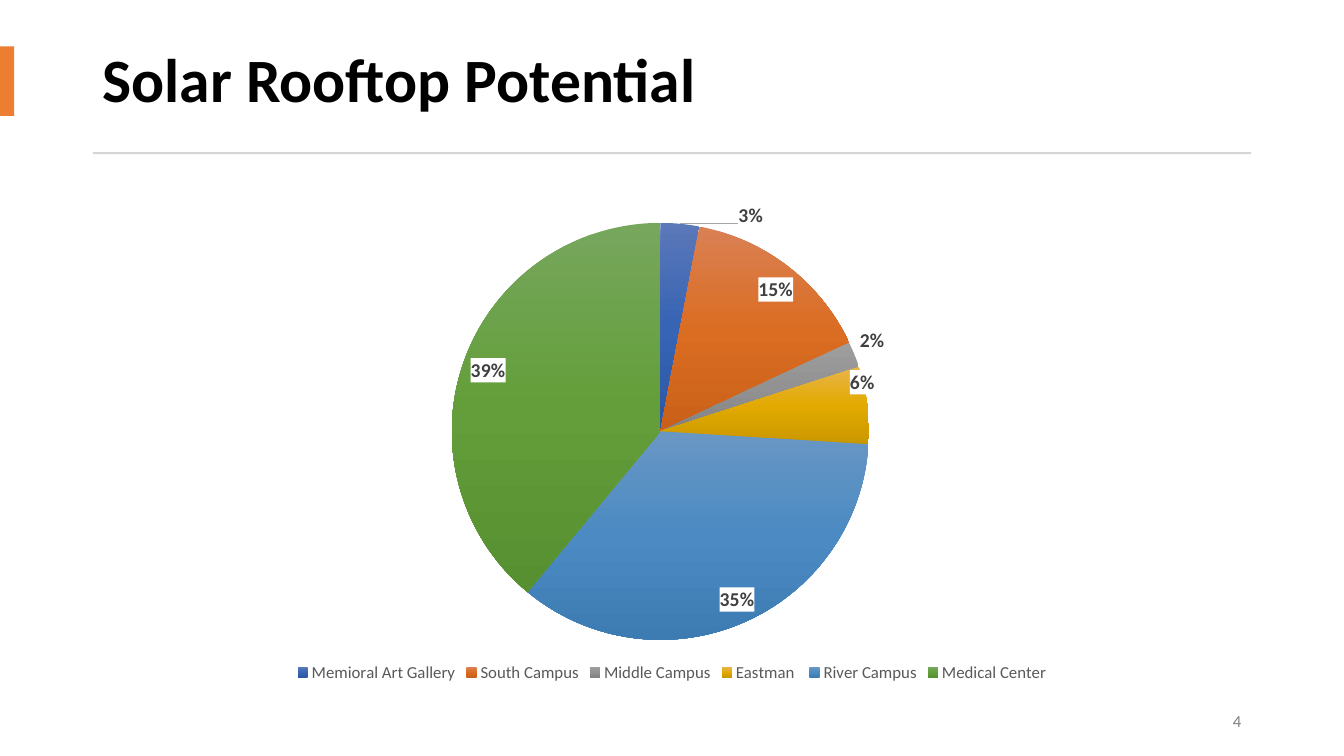
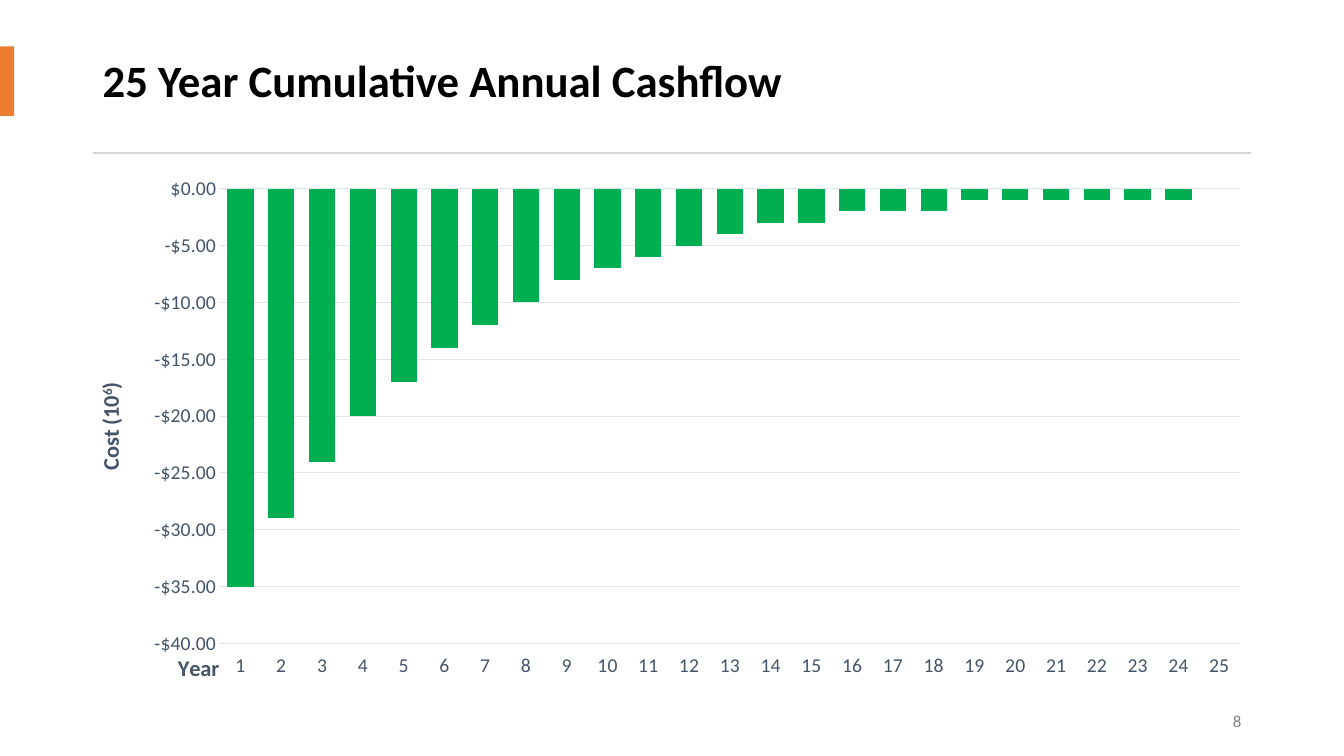
from copy import deepcopy

from pptx import Presentation, util as u
from pptx.chart.data import CategoryChartData
from pptx.dml.color import RGBColor
from pptx.enum import chart as ch, shapes, text
from pptx.oxml import parse_xml
from pptx.oxml.ns import nsdecls, qn

# Content
ROOFTOPS = [  # campus, share in percent, gradient from top to bottom
    ("Memioral Art Gallery", 3, ("5B78B9", "3764B4", "2C57A5")),
    ("South Campus", 15, ("D98054", "DB6D23", "CA6018")),
    ("Middle Campus", 2, ("9E9E9E", "929292", "828282")),
    ("Eastman ", 6, ("E8B44B", "E2AA00", "C99700")),
    ("River Campus", 35, ("6997C5", "4B8AC2", "3D7BB3")),
    ("Medical Center", 39, ("77A65D", "639E3A", "579030")),
]
LABEL_SHIFTS = {0: (0.05, 0.02), 3: (-0.02, -0.02)}  # slice: shares of the chart
CASHFLOW = [-35, -29, -24, -20, -17, -14, -12, -10, -8, -7, -6, -5, -4,
            -3, -3, -2, -2, -2, -1, -1, -1, -1, -1, -1, 0]

# Shared look
FONT = "Calibri"
ACCENT, RULE, PAGE_GREY = "ED7D31", "D5D5D5", "808080"
AXIS_TEXT, GRID, BARS, LEADER = "44546A", "E0E5EB", "00B050", "A6A6A6"
WIDTH, HEIGHT = 13.33, 7.5
MARGIN = 0.92
BODY = WIDTH - 2 * MARGIN


def rgb(value):
    return RGBColor.from_string(value)


def style(font, size, color, bold=False):
    font.name, font.size, font.bold = FONT, u.Pt(size), bold
    font.color.rgb = rgb(color)


def box(left, top, width, height):
    return [u.Inches(side) for side in (left, top, width, height)]


def add_band(slide, color, *place):
    band = slide.shapes.add_shape(shapes.MSO_SHAPE.RECTANGLE, *box(*place))
    band.shadow.inherit = False
    band.fill.solid()
    band.fill.fore_color.rgb = rgb(color)
    band.line.fill.background()


def add_text(slide, words, place, size, color, bold=False, align=text.PP_ALIGN.LEFT,
             spacing=1.0):
    frame = slide.shapes.add_textbox(*box(*place)).text_frame
    frame.word_wrap = True
    frame.vertical_anchor = text.MSO_ANCHOR.MIDDLE
    line = frame.paragraphs[0]
    line.alignment = align
    line.line_spacing = spacing
    run = line.add_run()
    run.text = words
    style(run.font, size, color, bold)


def add_page(deck, title, title_size, number):
    slide = deck.slides.add_slide(deck.slide_layouts[6])
    add_text(slide, title, (MARGIN, 0.27, BODY, 1.1), title_size, "000000", True,
             spacing=0.9)
    add_band(slide, ACCENT, 0, 0.46, 0.14, 0.69)
    add_band(slide, RULE, MARGIN, 1.51, BODY, 0.02)
    add_text(slide, str(number), (WIDTH - MARGIN - 2.72, 6.95, 2.72, 0.4), 12,
             PAGE_GREY, align=text.PP_ALIGN.RIGHT)
    return slide


def add_chart(slide, kind, top, height, names, values):
    data = CategoryChartData()
    data.categories = names
    data.add_series("Series 1", values)
    chart = slide.shapes.add_chart(kind, *box(MARGIN, top, BODY, height), data).chart
    style(chart.font, 10, "000000")
    chart.has_title = False
    chart.plots[0].vary_by_categories = False
    return chart


def place_part(part, index, x, y, w=None, h=None, mode="edge"):
    """Set a manual chart layout, in shares of the chart's size."""
    for old in part.findall(qn("c:layout")):
        part.remove(old)
    modes = f'<c:xMode val="{mode}"/><c:yMode val="{mode}"/>' if mode == "edge" else ""
    target = '<c:layoutTarget val="inner"/>' if w else ""
    size = f'<c:w val="{w}"/><c:h val="{h}"/>' if w else ""
    part.insert(index, parse_xml(
        f'<c:layout {nsdecls("c")}><c:manualLayout>{target}{modes}'
        f'<c:x val="{x}"/><c:y val="{y}"/>{size}</c:manualLayout></c:layout>'))


def plot_area(chart):
    return next(chart._chartSpace.iter(qn("c:plotArea")))


def add_rooftop_pie(slide):
    names, shares, gradients = zip(*ROOFTOPS)
    chart = add_chart(slide, ch.XL_CHART_TYPE.PIE, 1.8, 5.01, names, shares)
    place_part(plot_area(chart), 0, 0.31, 0.08, 0.36, 0.83)
    chart.has_legend = True
    chart.legend.position = ch.XL_LEGEND_POSITION.BOTTOM
    chart.legend.include_in_layout = False
    style(chart.legend.font, 12, "595959")

    # Three-step gradients, one per slice
    slices = chart.plots[0].series[0]
    for index in range(len(names)):
        fill = slices.points[index].format.fill
        fill.gradient()
        fill.gradient_angle = 270
    for grad, colors in zip(list(slices._element.iter(qn("a:gradFill"))), gradients):
        stops = "".join(f'<a:gs pos="{pos}"><a:srgbClr val="{color}"/></a:gs>'
                        for pos, color in zip((0, 50000, 100000), colors))
        grad.replace(grad.find(qn("a:gsLst")),
                     parse_xml(f'<a:gsLst {nsdecls("a")}>{stops}</a:gsLst>'))

    # Percent labels on white
    labels = slices.data_labels
    labels.show_value, labels.show_percentage = False, True
    labels.number_format, labels.number_format_is_linked = "0%", False
    labels.position = ch.XL_LABEL_POSITION.BEST_FIT
    style(labels.font, 14, "404040", True)
    group = labels._element
    group.find(qn("c:numFmt")).addnext(parse_xml(
        f'<c:spPr {nsdecls("c", "a")}><a:solidFill><a:srgbClr val="FFFFFF"/>'
        '</a:solidFill></c:spPr>'))

    # Labels pulled away from their usual place, with a grey leader line
    shared = [child for child in group if child.tag != qn("c:showLeaderLines")]
    for order, (index, shift) in enumerate(LABEL_SHIFTS.items()):
        moved = parse_xml(f'<c:dLbl {nsdecls("c")}><c:idx val="{index}"/></c:dLbl>')
        moved.extend([deepcopy(child) for child in shared])
        place_part(moved, 1, *shift, mode="factor")
        group.insert(order, moved)
    group.find(qn("c:showLeaderLines")).addnext(parse_xml(
        f'<c:leaderLines {nsdecls("c", "a")}><c:spPr><a:ln w="9525"><a:solidFill>'
        f'<a:srgbClr val="{LEADER}"/></a:solidFill></a:ln></c:spPr></c:leaderLines>'))


def title_axis(axis, runs, x, y, turn=0):
    frame = axis.axis_title.text_frame
    for words, raised in runs:
        run = frame.paragraphs[0].add_run()
        run.text = words
        style(run.font, 16, AXIS_TEXT, True)
        if raised:
            run.font._element.set("baseline", "30000")
    body = frame._txBody.find(qn("a:bodyPr"))
    body.set("rot", str(turn * 60000))
    body.set("vert", "horz")
    place_part(axis.axis_title._element, 1, x, y)


def add_cashflow_columns(slide):
    years = [str(year + 1) for year in range(len(CASHFLOW))]
    chart = add_chart(slide, ch.XL_CHART_TYPE.COLUMN_CLUSTERED, 1.65, 5.57, years, CASHFLOW)
    place_part(plot_area(chart), 0, 0.11, 0.04, 0.88, 0.81)
    chart.has_legend = False
    plot = chart.plots[0]
    plot.gap_width, plot.overlap = 55, -40
    columns = plot.series[0]
    columns.invert_if_negative = False
    columns.format.fill.solid()
    columns.format.fill.fore_color.rgb = rgb(BARS)

    year_axis, cost_axis = chart.category_axis, chart.value_axis
    for axis in (year_axis, cost_axis):
        axis.major_tick_mark = axis.minor_tick_mark = ch.XL_TICK_MARK.NONE
        style(axis.tick_labels.font, 14, AXIS_TEXT)
    year_axis.tick_label_position = ch.XL_TICK_LABEL_POSITION.LOW
    cost_axis.minimum_scale, cost_axis.maximum_scale, cost_axis.major_unit = -40, 0, 5
    cost_axis.tick_labels.number_format = '"$"#,##0.00'
    cost_axis.tick_labels.number_format_is_linked = False
    cost_axis.format.line.fill.background()
    for line in (year_axis.format.line, cost_axis.major_gridlines.format.line):
        line.color.rgb = rgb(GRID)
        line.width = u.Pt(0.75)
    title_axis(year_axis, [("Year", False)], 0.07, 0.86)
    title_axis(cost_axis, [("Cost (10", False), ("6", True), (")", False)], 0, 0.38, -90)


def main():
    deck = Presentation()
    deck.slide_width, deck.slide_height = u.Inches(WIDTH), u.Inches(HEIGHT)
    add_rooftop_pie(add_page(deck, "Solar Rooftop Potential", 44, 4))
    add_cashflow_columns(add_page(deck, "25 Year Cumulative Annual Cashflow", 32, 8))
    deck.save("out.pptx")


if __name__ == "__main__":
    main()
